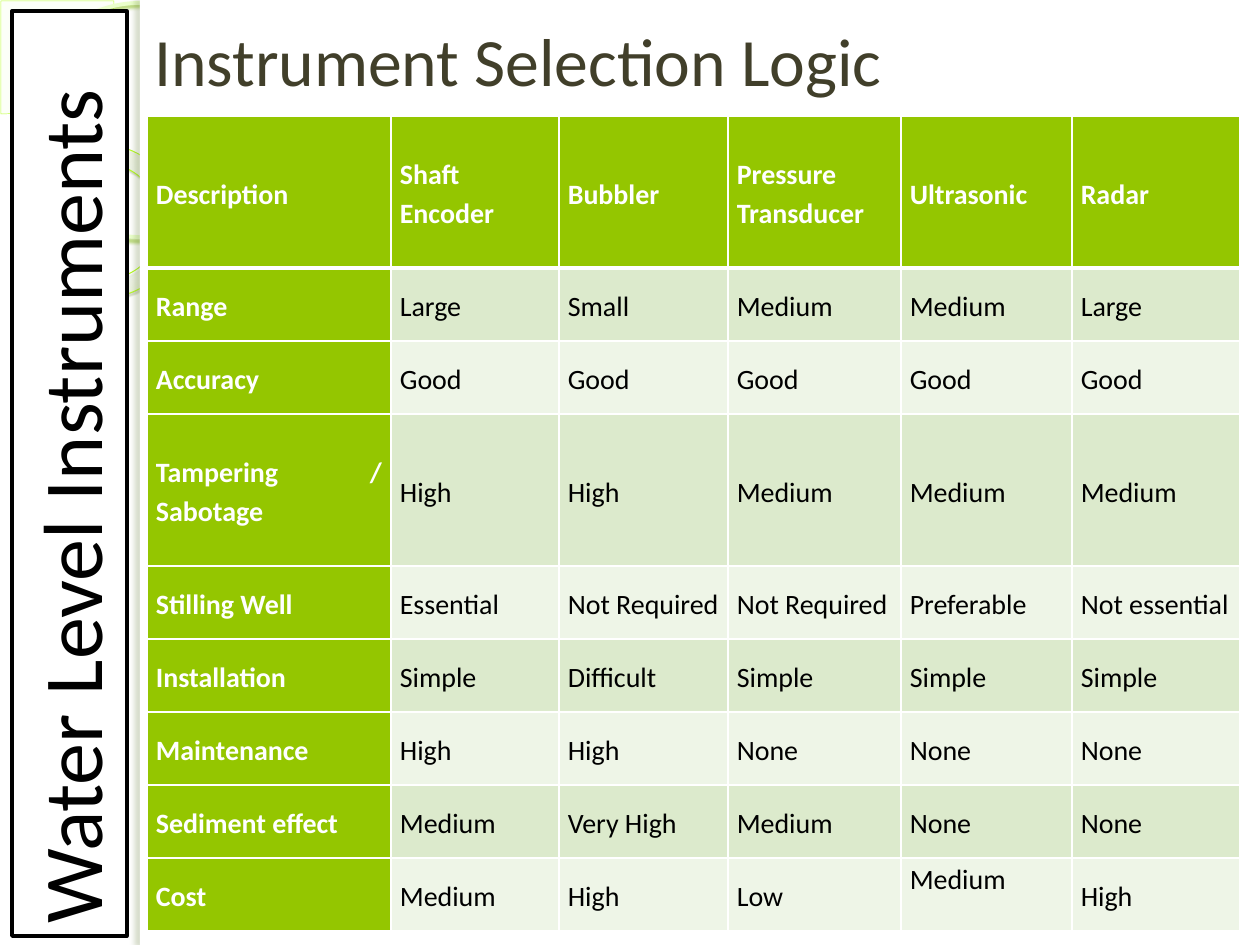
from lxml.etree import SubElement
from pptx import Presentation
from pptx.dml.color import RGBColor
from pptx.enum.shapes import MSO_SHAPE as Shape
from pptx.enum.text import MSO_ANCHOR as Anchor, MSO_AUTO_SIZE as AutoSize, PP_ALIGN as Align
from pptx.oxml import parse_xml
from pptx.oxml.ns import nsdecls, qn
from pptx.util import Emu, Pt

PX = 914400 / 126
FONT = "Calibri"
WHITE = RGBColor(0xFF, 0xFF, 0xFF)
BLACK = RGBColor(0x00, 0x00, 0x00)
TITLE_BROWN = RGBColor(0x41, 0x3F, 0x2A)
GREEN = RGBColor(0x94, 0xC6, 0x00)
BAND_DARK = RGBColor(0xDC, 0xEA, 0xCC)
BAND_LIGHT = RGBColor(0xEE, 0xF5, 0xE7)
PIE_FILL = RGBColor(0xF7, 0xFF, 0xEC)
PIE_LINE = RGBColor(0xBD, 0xFF, 0x37)
RING_LINE = RGBColor(0xEA, 0xFF, 0xCB)
DONUT_LINE = RGBColor(0xB6, 0xFC, 0x25)


def px(*lengths):
    return [Emu(round(length * PX)) for length in lengths]


def add_shape(kind, place, fill=None, line=None, width=0, shadow=None):
    shape = page.shapes.add_shape(kind, *px(*place))
    shape.shadow.inherit = False
    if fill is None:
        shape.fill.background()
    else:
        shape.fill.solid()
        shape.fill.fore_color.rgb = fill
    if line is None:
        shape.line.fill.background()
    else:
        shape.line.color.rgb = line
        shape.line.width = Pt(width)
    if shadow:
        color, alpha, blur, distance, angle = shadow
        effects = shape._element.spPr.find(qn("a:effectLst"))
        outer = SubElement(effects, qn("a:outerShdw"), blurRad=str(Pt(blur)),
                           dist=str(Pt(distance)), dir=str(angle * 60000),
                           algn="tl", rotWithShape="0")
        tint = SubElement(outer, qn("a:srgbClr"), val=color)
        SubElement(tint, qn("a:alpha"), val=str(alpha * 1000))
    return shape


deck = Presentation()
deck.slide_width, deck.slide_height = px(1260, 945)
page = deck.slides.add_slide(deck.slide_layouts[6])

# Background ornaments
pie = add_shape(Shape.PIE, (-112, -112, 226, 226), PIE_FILL, PIE_LINE, 0.25)
pie.adjustments[0] = 0
pie.adjustments[1] = 54.02
pie_color = pie._element.spPr.find(qn("a:solidFill"))[0]
SubElement(pie_color, qn("a:alpha"), val="33000")

add_shape(Shape.OVAL, (23, 3, 234, 234), None, RING_LINE, 2.15,
          ("9DCA42", 85, 2, 2, 90))

donut = add_shape(Shape.DONUT, (25, 145, 155, 152), None, DONUT_LINE, 0.58,
                  ("526F16", 35, 1, 1.2, 75))
donut.adjustments[0] = 0.12
donut.rotation = 38.6
stops = "".join(
    f'<a:gs pos="{stop * 1000}"><a:srgbClr val="{color}">'
    f'<a:alpha val="{alpha * 1000}"/></a:srgbClr></a:gs>'
    for stop, color, alpha in ((0, "FAFFF2", 70), (70, "FCFFF9", 55), (100, "C1FF40", 60)))
gradient = parse_xml(
    f'<a:gradFill {nsdecls("a")} rotWithShape="1"><a:gsLst>{stops}</a:gsLst>'
    '<a:path path="circle"><a:fillToRect l="-408000" t="-50000" r="508000" b="150000"/>'
    '</a:path></a:gradFill>')
donut_fill = donut._element.spPr.find(qn("a:noFill"))
donut_fill.getparent().replace(donut_fill, gradient)

# White content panel and its shaded edge
add_shape(Shape.RECTANGLE, (140, 0, 1120, 945), WHITE)
add_shape(Shape.RECTANGLE, (140, 0, 10, 945), WHITE, shadow=("657B39", 25, 3, 3, 180))

# Title
title = page.shapes.add_textbox(*px(142, 10, 1033, 98))
title.text_frame.word_wrap = True
title.text_frame.vertical_anchor = Anchor.MIDDLE
para = title.text_frame.paragraphs[0]
para.text = "Instrument Selection Logic"
para.font.name = FONT
para.font.size = Pt(38.7)
para.font.color.rgb = TITLE_BROWN

# Comparison table
ROWS = [
    ("Description", "Shaft Encoder", "Bubbler", "Pressure Transducer", "Ultrasonic", "Radar"),
    ("Range", "Large", "Small", "Medium", "Medium", "Large"),
    ("Accuracy", "Good", "Good", "Good", "Good", "Good"),
    ("Tampering / Sabotage ", "High", "High", "Medium", "Medium", "Medium"),
    ("Stilling Well", "Essential", "Not Required", "Not Required", "Preferable", "Not essential"),
    ("Installation", "Simple", "Difficult", "Simple", "Simple", "Simple"),
    ("Maintenance", "High", "High", "None", "None", "None"),
    ("Sediment effect", "Medium", "Very High", "Medium", "None", "None"),
    ("Cost", "Medium", "High", "Low", "Medium", "High"),
]
COLUMN_WIDTHS = (244, 168, 169, 173, 171, 168)
TALL_ROWS = (0, 3)
TOP_ALIGNED = (8, 4)

frame = page.shapes.add_table(len(ROWS), len(COLUMN_WIDTHS), *px(147, 116, 1093, 823))
table = frame.table
for column, width in zip(table.columns, px(*COLUMN_WIDTHS)):
    column.width = width
for r, texts in enumerate(ROWS):
    table.rows[r].height = px(152 if r in TALL_ROWS else 73)[0]
    for c, text in enumerate(texts):
        heading = r == 0 or c == 0
        cell = table.cell(r, c)
        cell.margin_left, cell.margin_right = px(9, 9)
        cell.margin_top = cell.margin_bottom = 0
        cell.vertical_anchor = Anchor.TOP if (r, c) == TOP_ALIGNED else Anchor.MIDDLE

        para = cell.text_frame.paragraphs[0]
        para.text = text
        para.alignment = Align.JUSTIFY
        para.line_spacing = 1.15
        para.space_after = Pt(10)
        para.font.name = FONT
        para.font.size = Pt(16)
        para.font.bold = heading
        para.font.color.rgb = WHITE if heading else BLACK

        # Borders come before the fill in the cell properties
        for side in ("lnL", "lnR", "lnT", "lnB"):
            thick = (r == 0 and side == "lnB") or (r == 1 and side == "lnT")
            border = SubElement(cell._tc.get_or_add_tcPr(), qn(f"a:{side}"),
                                w=str(Pt(3 if thick else 1)))
            SubElement(SubElement(border, qn("a:solidFill")), qn("a:srgbClr"), val=str(WHITE))
        cell.fill.solid()
        cell.fill.fore_color.rgb = GREEN if heading else BAND_DARK if r % 2 else BAND_LIGHT

# Vertical banner
banner = add_shape(Shape.RECTANGLE, (-393, 416, 925, 115), WHITE, BLACK, 2)
banner.rotation = 270
banner.text_frame.word_wrap = True
banner.text_frame.auto_size = AutoSize.SHAPE_TO_FIT_TEXT
banner.text_frame.vertical_anchor = Anchor.TOP
para = banner.text_frame.paragraphs[0]
para.text = "Water Level Instruments"
para.alignment = Align.LEFT
para.font.name = FONT
para.font.size = Pt(48)
para.font.color.rgb = BLACK

deck.save("out.pptx")
